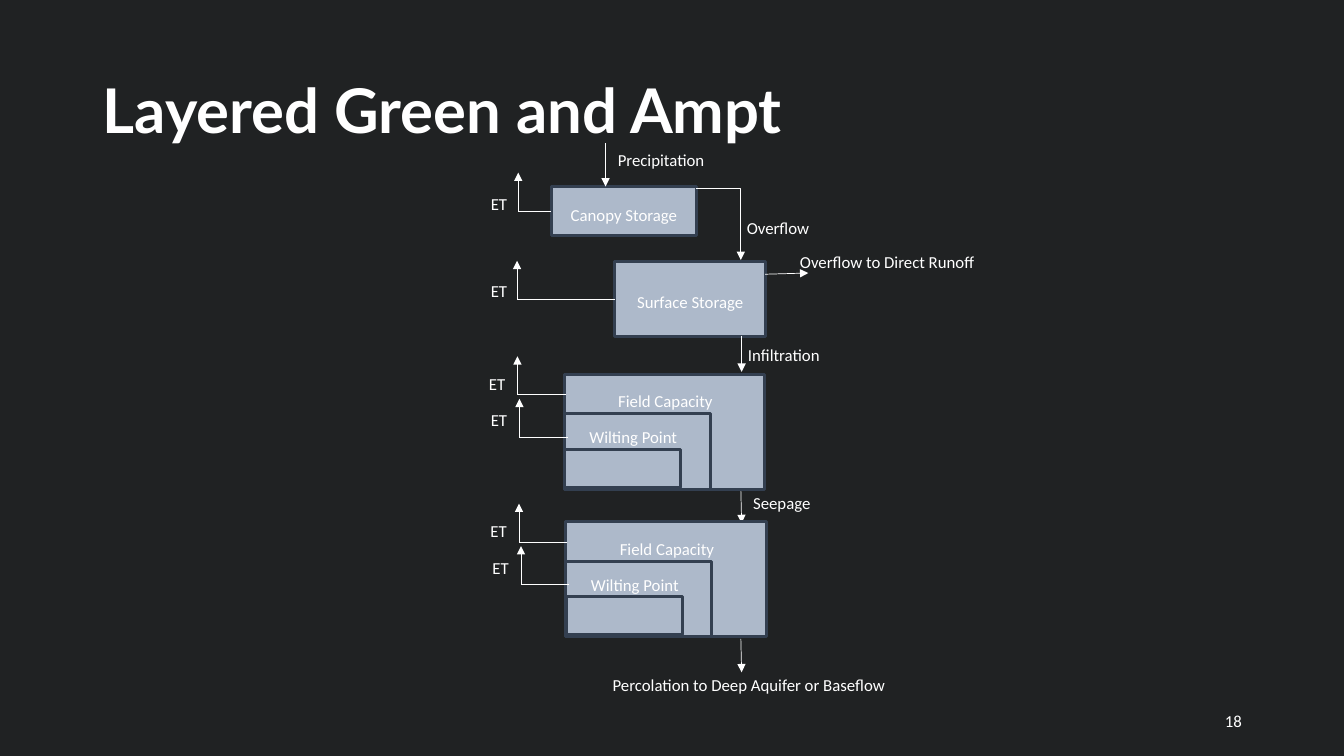
"""Build the Layered Green and Ampt slide: a cascade of storages linked by water flows."""
from dataclasses import dataclass

from lxml import etree
from pptx import Presentation
from pptx.dml.color import RGBColor
from pptx.enum.shapes import MSO_CONNECTOR, MSO_SHAPE
from pptx.enum.text import MSO_ANCHOR, MSO_AUTO_SIZE, PP_ALIGN
from pptx.oxml.ns import qn
from pptx.shapes.autoshape import Shape
from pptx.shapes.connector import Connector
from pptx.slide import Slide
from pptx.util import Cm, Pt

RECTANGLE = MSO_SHAPE.RECTANGLE
STRAIGHT, ELBOW = MSO_CONNECTOR.STRAIGHT, MSO_CONNECTOR.ELBOW
TOP, MIDDLE = MSO_ANCHOR.TOP, MSO_ANCHOR.MIDDLE
GROW, FIXED = MSO_AUTO_SIZE.SHAPE_TO_FIT_TEXT, MSO_AUTO_SIZE.NONE
LEFT, CENTER, RIGHT = PP_ALIGN.LEFT, PP_ALIGN.CENTER, PP_ALIGN.RIGHT
LEFT_SIDE = 1

COLORS = {"background": "202223", "text": "FFFFFF", "storage": "ADB9CA", "border": "333F50"}
ARROW_RISE = 0.97
LAYER_BRANCH = 1.22


@dataclass(frozen=True)
class Box:
    left: float
    top: float
    width: float
    height: float

    def placed(self, left: float, top: float) -> "Box":
        return Box(self.left + left, self.top + top, self.width, self.height)


@dataclass(frozen=True)
class Storage:
    box: Box
    name: str = ""
    name_box: Box | None = None


@dataclass(frozen=True)
class Flow:
    start: tuple[float, float]
    end: tuple[float, float]
    name: str
    name_box: Box
    bent: bool = False


@dataclass(frozen=True)
class Evaporation:
    start: float
    corner: float
    level: float
    label_lift: float
    label_reach: float = 0.94


CANOPY = Storage(Box(13.89, 4.7, 3.66, 1.24), "Canopy Storage", Box(13.97, 5.03, 3.51, 0.61))
SURFACE = Storage(Box(15.49, 6.6, 3.81, 1.88), "Surface Storage", Box(15.67, 7.22, 3.45, 0.61))
LAYER_PARTS = [
    Storage(Box(0, 0, 5.05, 2.9), "Field Capacity", Box(0.71, 0.29, 3.68, 0.76)),
    Storage(Box(0, 0.99, 3.68, 1.91), "Wilting Point", Box(0.15, 1.2, 3.18, 0.76)),
    Storage(Box(0.02, 1.88, 2.92, 0.97)),
]
LAYER_ORIGINS = [(14.22, 9.44), (14.26, 13.15)]
LAYER_EVAPORATION = [(0.04, 0.51, 0.66), (0.09, 1.58, 0.81)]

FLOWS = [
    Flow((15.26, 3.61), (15.26, 4.7), "Precipitation", Box(15.32, 3.64, 2.82, 0.66)),
    Flow((17.53, 4.75), (18.67, 6.55), "Overflow", Box(18.57, 5.37, 2.54, 0.66), bent=True),
    Flow((19.28, 6.91), (20.37, 6.88), "Overflow to Direct Runoff", Box(19.91, 6.21, 5.05, 0.61)),
    Flow((18.69, 8.46), (18.69, 9.37), "Infiltration", Box(18.6, 8.56, 2.41, 0.61)),
    Flow((18.67, 12.34), (18.69, 13.18), "Seepage", Box(18.73, 12.29, 2.41, 0.76)),
    Flow((18.67, 16.1), (18.69, 16.94), "Percolation to Deep Aquifer or Baseflow",
         Box(15.19, 16.89, 7.9, 0.76)),
]


def color(name: str) -> RGBColor:
    return RGBColor.from_string(COLORS[name])


def add_text(slide: Slide, text: str, box: Box, *, size: float = 12, font: str = "Calibri",
             bold: bool = False, align: PP_ALIGN = LEFT, anchor: MSO_ANCHOR = TOP,
             auto_size: MSO_AUTO_SIZE = GROW, fill: str | None = None,
             line_spacing: float | None = None) -> Shape:
    shape = slide.shapes.add_textbox(Cm(box.left), Cm(box.top), Cm(box.width), Cm(box.height))
    if fill:
        shape.fill.solid()
        shape.fill.fore_color.rgb = color(fill)
    frame = shape.text_frame
    frame.word_wrap = True
    frame.auto_size = auto_size
    frame.vertical_anchor = anchor
    paragraph = frame.paragraphs[0]
    paragraph.alignment = align
    paragraph.line_spacing = line_spacing
    run = paragraph.add_run()
    run.text = text
    run.font.size = Pt(size)
    run.font.name = font
    run.font.bold = bold
    run.font.color.rgb = color("text")
    return shape


def add_storage(slide: Slide, storage: Storage, left: float = 0, top: float = 0) -> Shape:
    box = storage.box.placed(left, top)
    shape = slide.shapes.add_shape(RECTANGLE, Cm(box.left), Cm(box.top), Cm(box.width),
                                   Cm(box.height))
    shape.shadow.inherit = False
    shape.fill.solid()
    shape.fill.fore_color.rgb = color("storage")
    shape.line.color.rgb = color("border")
    shape.line.width = Pt(2)
    if storage.name_box:
        add_text(slide, storage.name, storage.name_box.placed(left, top), align=CENTER,
                 fill="storage")
    return shape


def add_line(slide: Slide, start: tuple[float, float], end: tuple[float, float], *,
             arrow: bool = True, bent: bool = False) -> Connector:
    connector = slide.shapes.add_connector(ELBOW if bent else STRAIGHT, Cm(start[0]),
                                           Cm(start[1]), Cm(end[0]), Cm(end[1]))
    connector.line.color.rgb = color("text")
    connector.line.width = Pt(0.5)
    properties = connector._element.spPr
    if bent:
        properties.find(qn("a:prstGeom")).set("prst", "bentConnector2")
    if arrow:
        etree.SubElement(properties.find(qn("a:ln")), qn("a:tailEnd"), type="triangle")
    etree.SubElement(properties, qn("a:effectLst"))
    return connector


def add_flow(slide: Slide, flow: Flow) -> None:
    add_line(slide, flow.start, flow.end, bent=flow.bent)
    add_text(slide, flow.name, flow.name_box)


def add_evaporation(slide: Slide, branch: Evaporation, source: Shape | None = None) -> None:
    corner = (branch.corner, branch.level)
    line = add_line(slide, (branch.start, branch.level), corner, arrow=False)
    if source:
        line.begin_connect(source, LEFT_SIDE)
    add_line(slide, corner, (branch.corner, branch.level - ARROW_RISE))
    add_text(slide, "ET", Box(branch.corner - branch.label_reach,
                              branch.level - branch.label_lift, 0.97, 0.61))


def add_soil_layer(slide: Slide, left: float, top: float) -> None:
    for part in LAYER_PARTS:
        add_storage(slide, part, left, top)
    for offset, depth, lift in LAYER_EVAPORATION:
        start = left + offset
        add_evaporation(slide, Evaporation(start, start - LAYER_BRANCH, top + depth, lift, 0.97))


def main() -> None:
    presentation = Presentation()
    presentation.slide_width, presentation.slide_height = Cm(33.87), Cm(19.05)
    slide = presentation.slides.add_slide(presentation.slide_layouts[6])
    slide.background.fill.solid()
    slide.background.fill.fore_color.rgb = color("background")

    add_text(slide, "Layered Green and Ampt", Box(2.34, 1.02, 29.21, 3.68), size=44, font="Lato",
             bold=True, anchor=MIDDLE, auto_size=FIXED, line_spacing=0.9)
    add_text(slide, "18", Box(23.93, 17.65, 7.62, 1.02), align=RIGHT, anchor=MIDDLE,
             auto_size=FIXED)
    canopy = add_storage(slide, CANOPY)
    surface = add_storage(slide, SURFACE)
    for flow in FLOWS:
        add_flow(slide, flow)
    add_evaporation(slide, Evaporation(13.89, 13.06, 5.32, 0.57), canopy)
    add_evaporation(slide, Evaporation(15.49, 13.03, 7.54, 0.6, 0.91), surface)
    for left, top in LAYER_ORIGINS:
        add_soil_layer(slide, left, top)
    presentation.save("out.pptx")


if __name__ == "__main__":
    main()
